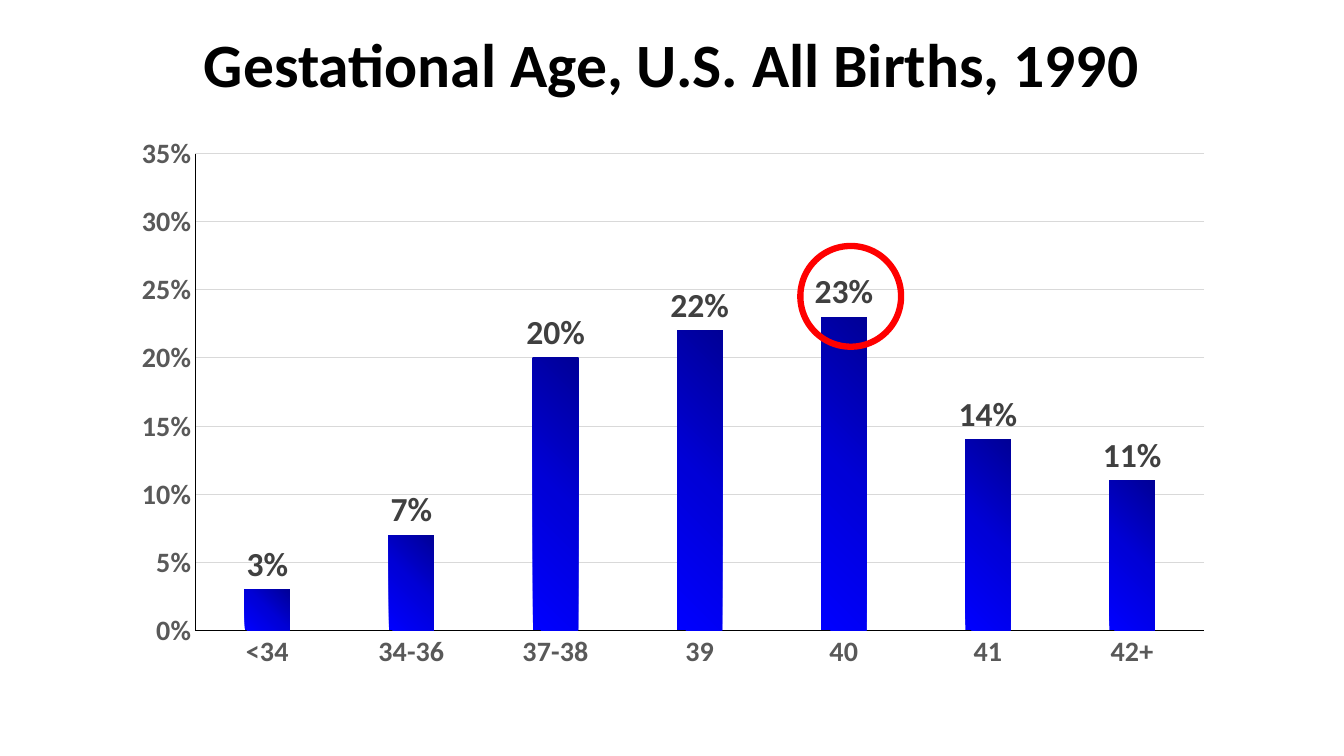
from pptx import Presentation
from pptx.chart.data import CategoryChartData
from pptx.dml.color import RGBColor
from pptx.enum.chart import XL_CHART_TYPE, XL_LABEL_POSITION, XL_TICK_MARK
from pptx.enum.shapes import MSO_SHAPE
from pptx.enum.text import MSO_ANCHOR, PP_ALIGN
from pptx.oxml import parse_xml
from pptx.oxml.ns import nsdecls
from pptx.util import Pt

COLUMN = XL_CHART_TYPE.COLUMN_CLUSTERED
OUTSIDE = XL_LABEL_POSITION.OUTSIDE_END
NO_TICK = XL_TICK_MARK.NONE
OVAL = MSO_SHAPE.OVAL
MIDDLE = MSO_ANCHOR.MIDDLE
CENTER = PP_ALIGN.CENTER

COLORS = {
    "black": "000000", "axis": "595959", "label": "404040",
    "grid": "D9D9D9", "ring": "FF0000",
    "dark": "000097", "mid": "0000D7", "bright": "0000FF",
}


def style(font, size, color):
    values = {"name": "Calibri", "size": Pt(size), "bold": True}
    for key, value in values.items():
        setattr(font, key, value)
    font.color.rgb = RGBColor.from_string(COLORS[color])


def stroke(line, color, width):
    line.color.rgb = RGBColor.from_string(COLORS[color])
    line.width = Pt(width)


deck = Presentation()
deck.slide_width, deck.slide_height = Pt(960), Pt(540)
slide = deck.slides.add_slide(deck.slide_layouts[6])

# Title
title = slide.shapes.add_textbox(Pt(48), Pt(0), Pt(864), Pt(90))
frame = title.text_frame
frame.word_wrap = True
frame.vertical_anchor = MIDDLE
para = frame.paragraphs[0]
para.alignment = CENTER
run = para.add_run()
run.text = "Gestational Age, U.S. All Births, 1990"
style(run.font, 44, "black")

# Share of births by week
data = CategoryChartData(number_format="0%")
data.categories = ["<34", "34-36", "37-38", "39", "40", "41", "42+"]
data.add_series("Series 1", [0.03, 0.07, 0.2, 0.22, 0.23, 0.14, 0.11])
chart = slide.shapes.add_chart(
    COLUMN, Pt(84), Pt(90), Pt(792), Pt(396), data).chart
chart.has_title = False
chart.has_legend = False
style(chart.font, 20, "axis")

# Axes and grid
weeks, share = chart.category_axis, chart.value_axis
for axis in (weeks, share):
    axis.major_tick_mark = axis.minor_tick_mark = NO_TICK
    style(axis.tick_labels.font, 20, "axis")
    stroke(axis.format.line, "black", 0.75)
weeks.has_major_gridlines = False
scale = {"minimum_scale": 0, "maximum_scale": 0.35, "major_unit": 0.05,
         "has_major_gridlines": True}
for key, value in scale.items():
    setattr(share, key, value)
share.tick_labels.number_format = "0%"
share.tick_labels.number_format_is_linked = False
stroke(share.major_gridlines.format.line, "grid", 0.75)

# Bars: gradient spreading from the top right corner
plot = chart.plots[0]
plot.gap_width, plot.overlap, plot.vary_by_categories = 219, -27, False
bars = plot.series[0]
bars.invert_if_negative = False
stops = "".join(
    f'<a:gs pos="{i * 50000}"><a:srgbClr val="{COLORS[name]}"/></a:gs>'
    for i, name in enumerate(("dark", "mid", "bright")))
bars.format.fill.background()
blank = bars._element.xpath("c:spPr/a:noFill")[0]
blank.getparent().replace(blank, parse_xml(
    f'<a:gradFill {nsdecls("a")} rotWithShape="1"><a:gsLst>{stops}</a:gsLst>'
    '<a:path path="circle"><a:fillToRect l="100000" b="100000"/></a:path>'
    '</a:gradFill>'))

# Bar labels
plot.has_data_labels = True
labels = plot.data_labels
marks = {"show_value": True, "number_format": "0%",
         "number_format_is_linked": False, "position": OUTSIDE}
for key, value in marks.items():
    setattr(labels, key, value)
style(labels.font, 24, "label")

# Inner plot area as fractions of the chart
area = chart._chartSpace.xpath("c:chart/c:plotArea")[0]
for old in area.xpath("c:layout"):
    area.remove(old)
sides = {"x": 0.07, "y": 0.05, "w": 0.91, "h": 0.86}
parts = "".join(f'<c:{key} val="{value}"/>' for key, value in sides.items())
area.insert(0, parse_xml(
    f'<c:layout {nsdecls("c")}><c:manualLayout><c:layoutTarget val="inner"/>'
    f'<c:xMode val="edge"/><c:yMode val="edge"/>{parts}'
    '</c:manualLayout></c:layout>'))

# Ring around the peak
ring = slide.shapes.add_shape(OVAL, Pt(571.68), Pt(175.68), Pt(72), Pt(72))
ring.rotation = 357.2
ring.shadow.inherit = False
ring.fill.background()
stroke(ring.line, "ring", 4.5)

deck.save("out.pptx")
